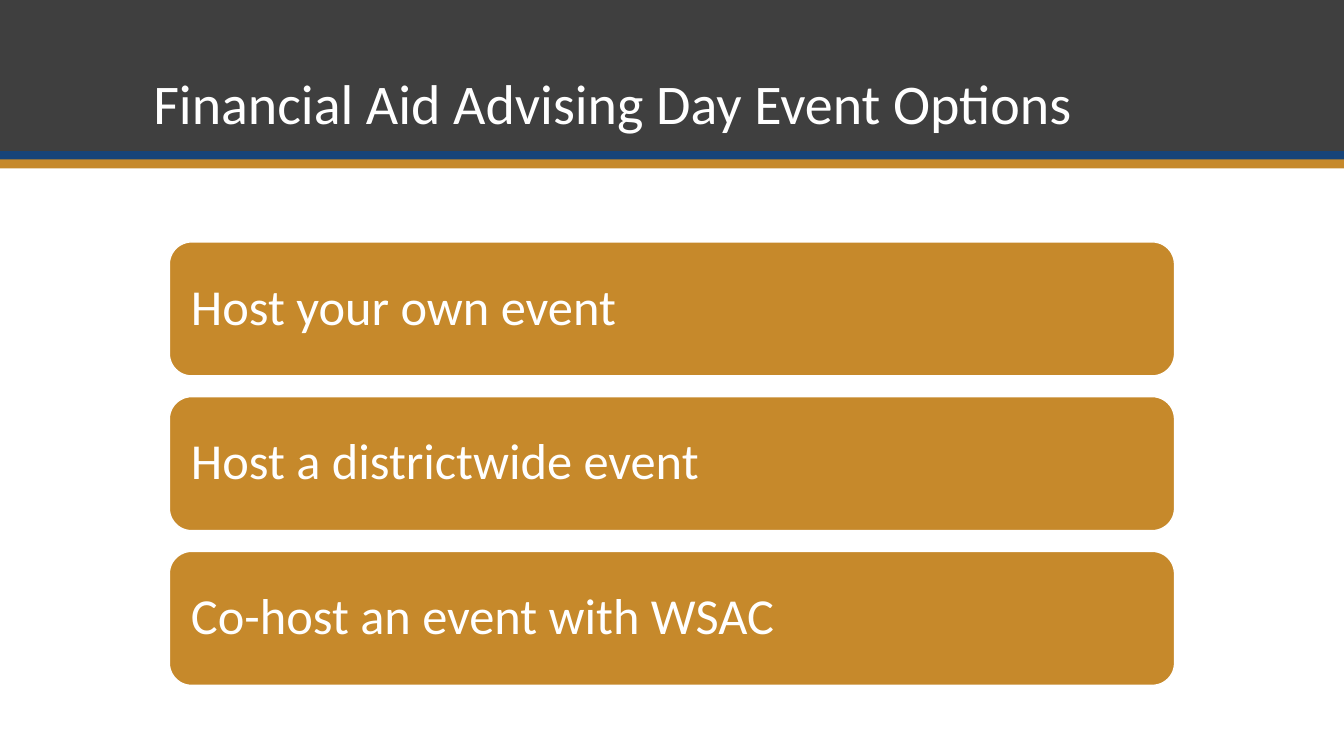
from pptx import Presentation
from pptx.dml.color import RGBColor
from pptx.enum.shapes import MSO_SHAPE
from pptx.enum.text import MSO_ANCHOR, MSO_AUTO_SIZE, PP_ALIGN
from pptx.util import Inches, Pt

RECT, ROUND = MSO_SHAPE.RECTANGLE, MSO_SHAPE.ROUNDED_RECTANGLE
MIDDLE, BOTTOM = MSO_ANCHOR.MIDDLE, MSO_ANCHOR.BOTTOM
LEFT, NO_FIT = PP_ALIGN.LEFT, MSO_AUTO_SIZE.NONE

WHITE, GRAY, BLUE, GOLD = "FFFFFF", "3F3F3F", "174479", "C6892B"
WIDTH, HEIGHT = 13.33, 7.5

TITLE = "Financial Aid Advising Day Event Options"
OPTIONS = [
    "Host your own event",
    "Host a districtwide event",
    "Co-host an event with WSAC",
]
BANDS = [(0, 1.5, GRAY), (1.5, 0.09, BLUE), (1.58, 0.09, GOLD)]  # top, height, fill

CARD_X, CARD_Y, CARD_W, CARD_H = 1.68, 2.4, 9.97, 1.33
STEP = 1.535


def color(code):
    return RGBColor.from_string(code)


def add_box(slide, kind, x, y, w, h, fill):
    box = slide.shapes.add_shape(kind, Inches(x), Inches(y), Inches(w), Inches(h))
    box.shadow.inherit = False
    box.fill.solid()
    box.fill.fore_color.rgb = color(fill)
    box.line.fill.background()
    return box


def set_text(shape, text, size, anchor):
    frame = shape.text_frame
    frame.text = text
    frame.word_wrap = True
    frame.auto_size = NO_FIT
    frame.vertical_anchor = anchor
    para = frame.paragraphs[0]
    para.alignment = LEFT
    para.line_spacing = 0.9
    para.font.name = "Calibri"
    para.font.size = Pt(size)
    para.font.color.rgb = color(WHITE)


def main():
    deck = Presentation()
    deck.slide_width, deck.slide_height = Inches(WIDTH), Inches(HEIGHT)
    slide = deck.slides.add_slide(deck.slide_layouts[5])

    for top, height, fill in BANDS:
        add_box(slide, RECT, 0, top, WIDTH, height, fill)

    title = slide.shapes.title
    title.left, title.top = Inches(1.42), Inches(0.28)
    title.width, title.height = Inches(10.5), Inches(1.13)
    set_text(title, TITLE, 40, BOTTOM)
    slide.shapes.element.append(title.element)  # bring in front of the bands

    for row, option in enumerate(OPTIONS):
        card = add_box(slide, ROUND, CARD_X, CARD_Y + row * STEP, CARD_W, CARD_H, GOLD)
        card.line.color.rgb = color(WHITE)
        card.line.width = Pt(1)
        # The rounded corner itself insets the text by a further 0.07 inch.
        card.text_frame.margin_left = card.text_frame.margin_right = Inches(0.15)
        set_text(card, option, 36, MIDDLE)

    deck.save("out.pptx")


if __name__ == "__main__":
    main()
